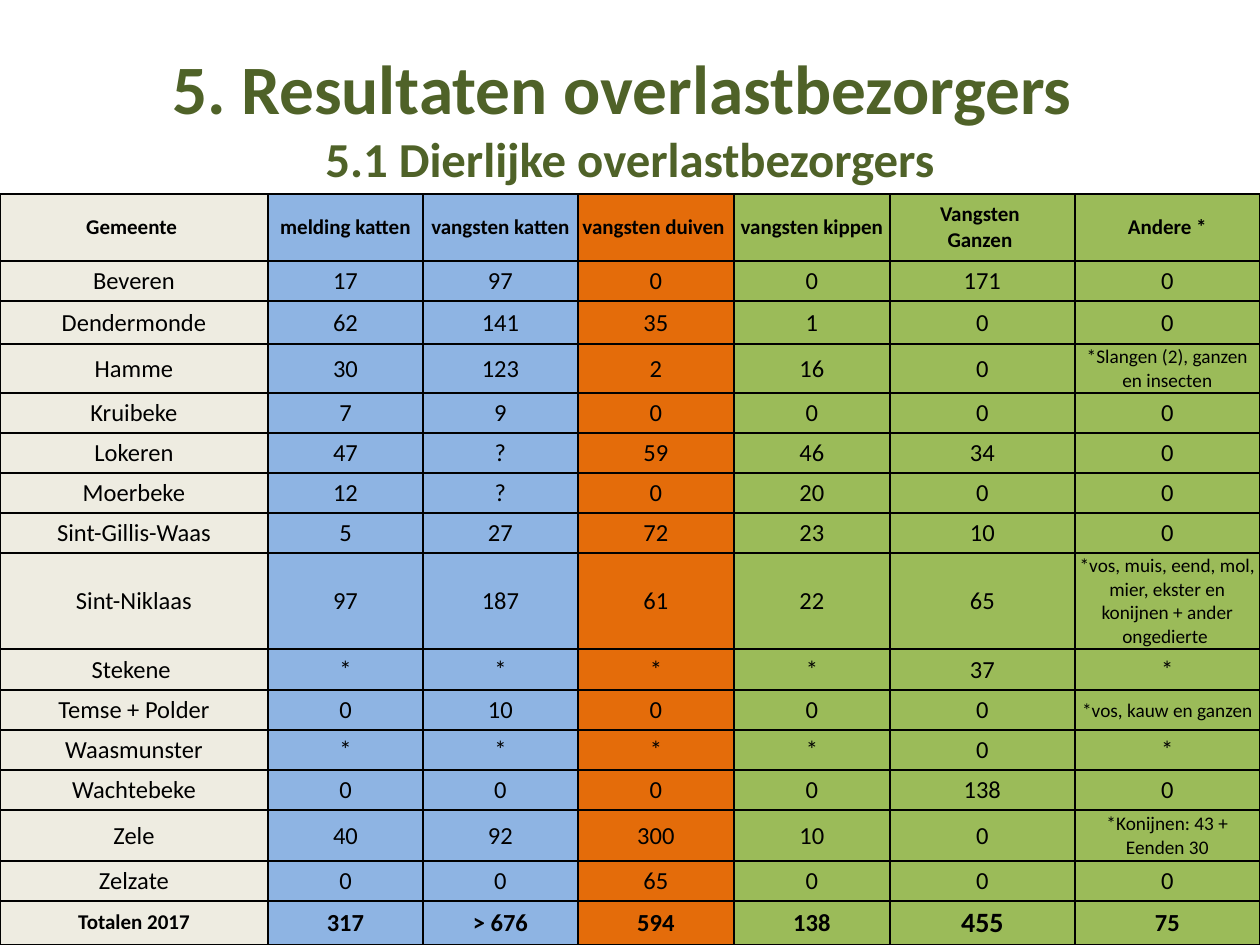
from dataclasses import dataclass

from lxml import etree
from pptx import Presentation
from pptx import util as u
from pptx.dml.color import RGBColor
from pptx.enum import text
from pptx.oxml.ns import qn

PX = u.Inches(1) // 126  # one px in EMU


@dataclass(frozen=True)
class Theme:
    font: str = "Calibri"
    title: str = "4F6228"
    ink: str = "000000"
    name_fill: str = "EEECE1"
    cats_fill: str = "8EB4E3"
    pigeons_fill: str = "E46C0A"
    birds_fill: str = "9BBB59"
    title_size: float = 39.6
    subtitle_size: float = 27.9
    label_size: int = 12
    body_size: int = 14
    note_size: int = 11
    peak_size: int = 16
    border: float = 1


T = Theme()

COLUMN_WIDTHS = [268, 155, 155, 156, 156, 185, 185]
COLUMN_FILLS = [T.name_fill] + [T.cats_fill] * 2 + [T.pigeons_fill] + [T.birds_fill] * 3
ROW_HEIGHTS = [67, 40, 43, 49, 40, 40, 40, 40, 96, 41, 40, 40, 40, 51, 40, 44]

ROWS = [
    ["Gemeente ", "melding katten", "vangsten katten", "vangsten duiven ",
     "vangsten kippen", "Vangsten \nGanzen ", "Andere *"],
    ["Beveren", "17", "97", "0", "0", "171", "0"],
    ["Dendermonde", "62", "141", "35", "1", "0", "0"],
    ["Hamme", "30", "123", "2", "16", "0", "*Slangen (2), ganzen en insecten"],
    ["Kruibeke", "7", "9", "0", "0", "0", "0"],
    ["Lokeren", "47", "?", "59", "46", "34", "0"],
    ["Moerbeke", "12", "?", "0", "20", "0", "0"],
    ["Sint-Gillis-Waas", "5", "27", "72", "23", "10", "0"],
    ["Sint-Niklaas", "97", "187", "61", "22", "65",
     "*vos, muis, eend, mol, mier, ekster en konijnen + ander ongedierte "],
    ["Stekene ", "*", "*", "*", "*", "37", "*"],
    ["Temse + Polder", "0", "10", "0", "0", "0", "*vos, kauw en ganzen"],
    ["Waasmunster", "*", "*", "*", "*", "0", "*"],
    ["Wachtebeke", "0", "0", "0", "0", "138", "0"],
    ["Zele", "40", "92", "300", "10", "0", "*Konijnen: 43 + Eenden 30"],
    ["Zelzate", "0", "0", "65", "0", "0", "0"],
    ["Totalen 2017", "317", "> 676", "594", "138", "455", "75"],
]
LAST = len(ROWS) - 1


def style_run(r, size, color, bold):
    r.font.name = T.font
    r.font.size = u.Pt(size)
    r.font.bold = bold
    r.font.color.rgb = RGBColor.from_string(color)


def place_title(sp, heading, subheading):
    sp.left, sp.top, sp.width, sp.height = (n * PX for n in (63, 38, 1134, 157))
    tf = sp.text_frame
    tf.text = f"{heading}\v{subheading}"
    tf.word_wrap = True
    tf.auto_size = text.MSO_AUTO_SIZE.NONE
    tf.vertical_anchor = text.MSO_ANCHOR.MIDDLE
    p = tf.paragraphs[0]
    p.alignment = text.PP_ALIGN.CENTER
    for r, size in zip(p.runs, (T.title_size, T.subtitle_size)):
        style_run(r, size, T.title, True)


def draw_borders(cell):
    tc_pr = cell._tc.get_or_add_tcPr()
    for i, side in enumerate(("a:lnL", "a:lnR", "a:lnT", "a:lnB")):
        ln = etree.Element(qn(side), w=str(u.Pt(T.border)))
        fill = etree.SubElement(ln, qn("a:solidFill"))
        etree.SubElement(fill, qn("a:srgbClr"), val=T.ink)
        tc_pr.insert(i, ln)  # borders come before the cell fill


def cell_size(row, col, value):
    if row == 0 or (row == LAST and col == 0):
        return T.label_size
    if row == LAST and col == 5:
        return T.peak_size
    is_note = value.startswith("*") and len(value) > 1
    return T.note_size if is_note else T.body_size


def fill_cell(cell, row, col, value):
    cell.fill.solid()
    cell.fill.fore_color.rgb = RGBColor.from_string(COLUMN_FILLS[col])
    draw_borders(cell)
    cell.vertical_anchor = text.MSO_ANCHOR.MIDDLE
    wide = row == 0 or (row == LAST and col < 3)
    cell.margin_left = cell.margin_right = (4 if wide else 1) * PX
    cell.margin_top = (0 if wide else 1) * PX
    cell.margin_bottom = 0
    cell.text_frame.text = value
    for p in cell.text_frame.paragraphs:
        p.alignment = text.PP_ALIGN.CENTER
        for r in p.runs:
            style_run(r, cell_size(row, col, value), T.ink, row in (0, LAST))


def add_results_table(s):
    frame = s.shapes.add_table(
        len(ROWS), len(COLUMN_WIDTHS), 0, 194 * PX,
        sum(COLUMN_WIDTHS) * PX, sum(ROW_HEIGHTS) * PX)
    table = frame.table
    table.horz_banding = False
    for column, width in zip(table.columns, COLUMN_WIDTHS):
        column.width = width * PX
    for i, (values, height) in enumerate(zip(ROWS, ROW_HEIGHTS)):
        table.rows[i].height = height * PX
        for j, value in enumerate(values):
            fill_cell(table.cell(i, j), i, j, value)


def main():
    prs = Presentation()
    prs.slide_width, prs.slide_height = 1260 * PX, 945 * PX
    s = prs.slides.add_slide(prs.slide_layouts[5])  # title only

    # Heading
    place_title(s.shapes.title, "5. Resultaten overlastbezorgers ",
                "5.1 Dierlijke overlastbezorgers")

    # Results per municipality
    add_results_table(s)
    prs.save("out.pptx")


if __name__ == "__main__":
    main()
